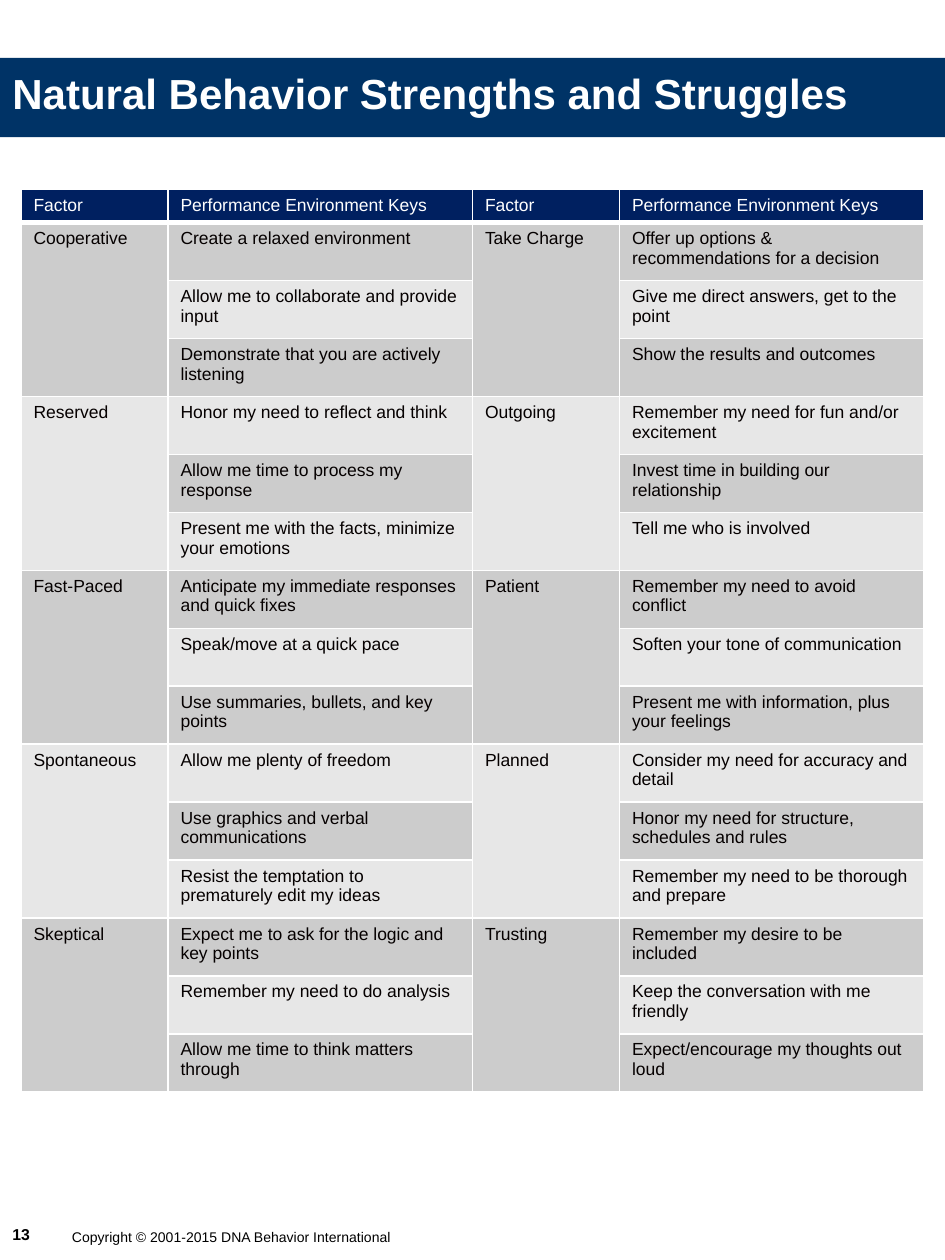
from lxml.etree import SubElement
from pptx import Presentation
from pptx.dml.color import RGBColor
from pptx.enum.shapes import MSO_SHAPE
from pptx.enum.text import MSO_ANCHOR
from pptx.oxml.ns import qn
from pptx.util import Inches, Pt

THEME = {
    "band": RGBColor.from_string("003366"),
    "header": RGBColor.from_string("002060"),
    "stripes": [RGBColor.from_string("CCCCCC"), RGBColor.from_string("E7E7E7")],
    "border": "FFFFFF",
    "title": {"size": Pt(24), "bold": True, "color": "FFFFFF"},
    "heading": {"size": Pt(10), "bold": False, "color": "FFFFFF"},
    "body": {"size": Pt(10), "bold": False, "color": "050000"},
    "number": {"size": Pt(9), "bold": True, "color": "000000"},
    "copyright": {"size": Pt(8), "bold": False, "color": "000000"},
}

HEADINGS = ["Factor", "Performance Environment Keys"] * 2
ROWS_PER_FACTOR = 3
FACTOR_PAIRS = [
    ("Cooperative", ["Create a relaxed environment",
                     "Allow me to collaborate and provide input",
                     "Demonstrate that you are actively listening"],
     "Take Charge", ["Offer up options & recommendations for a decision",
                     "Give me direct answers, get to the point",
                     "Show the results and outcomes"]),
    ("Reserved", ["Honor my need to reflect and think",
                  "Allow me time to process my response",
                  "Present me with the facts, minimize your emotions"],
     "Outgoing", ["Remember my need for fun and/or excitement",
                  "Invest time in building our relationship",
                  "Tell me who is involved"]),
    ("Fast-Paced", ["Anticipate my immediate responses and quick fixes",
                    "Speak/move at a quick pace",
                    "Use summaries, bullets, and key points"],
     "Patient", ["Remember my need to avoid conflict",
                 "Soften your tone of communication",
                 "Present me with information, plus your feelings"]),
    ("Spontaneous", ["Allow me plenty of freedom",
                     "Use graphics and verbal communications",
                     "Resist the temptation to prematurely edit my ideas"],
     "Planned", ["Consider my need for accuracy and detail",
                 "Honor my need for structure, schedules and rules",
                 "Remember my need to be thorough and prepare"]),
    ("Skeptical", ["Expect me to ask for the logic and key points",
                   "Remember my need to do analysis",
                   "Allow me time to think matters through"],
     "Trusting", ["Remember my desire to be included",
                  "Keep the conversation with me friendly",
                  "Expect/encourage my thoughts out loud"]),
]


def write(text_frame, text, style):
    paragraph = text_frame.paragraphs[0]
    paragraph.text = text
    font = paragraph.runs[0].font
    font.name = "Arial"
    font.color.rgb = RGBColor.from_string(THEME[style]["color"])
    for attribute in ("size", "bold"):
        setattr(font, attribute, THEME[style][attribute])


def format_cell(cell, color, bottom_width):
    """Draw the four borders, then the fill, as the cell's schema orders them."""
    properties = cell._tc.get_or_add_tcPr()
    for side, width in {"L": 1, "R": 1, "T": 1, "B": bottom_width}.items():
        line = SubElement(properties, qn(f"a:ln{side}"), w=str(Pt(width)))
        fill = SubElement(line, qn("a:solidFill"))
        SubElement(fill, qn("a:srgbClr"), val=THEME["border"])
    cell.fill.solid()
    cell.fill.fore_color.rgb = color


presentation = Presentation()
presentation.slide_width, presentation.slide_height = Inches(7.5), Inches(10)
width, height = presentation.slide_width, presentation.slide_height
slide = presentation.slides.add_slide(presentation.slide_layouts[6])

band = slide.shapes.add_shape(
    MSO_SHAPE.RECTANGLE, 0, int(height * 0.046), width, int(height * 0.063))
band.shadow.inherit = False
band.fill.solid()
band.fill.fore_color.rgb = THEME["band"]
band.line.fill.background()

# Text boxes: left, top, width and height as shares of the slide
TEXTS = [
    ("13", "number", (0, 0.967, 0.07, 0.025), MSO_ANCHOR.MIDDLE, True),
    ("Copyright © 2001-2015 DNA Behavior International", "copyright",
     (0.063, 0.97, 0.37, 0.024), MSO_ANCHOR.MIDDLE, False),
    ("Natural Behavior Strengths and Struggles", "title",
     (0, 0.049, 1, 0.05), MSO_ANCHOR.TOP, True),
]
for text, style, (left, top, box_width, box_height), anchor, wrap in TEXTS:
    box = slide.shapes.add_textbox(int(width * left), int(height * top),
                                   int(width * box_width), int(height * box_height))
    for attribute, value in {"word_wrap": wrap, "vertical_anchor": anchor}.items():
        setattr(box.text_frame, attribute, value)
    write(box.text_frame, text, style)

# The table sits on a grid of 45 columns, one of them left free at each side
column = width / 45
column_spans = [7, 14.5, 7, 14.5]
row_heights = [int(height * 0.026)]
row_heights += [int(height * 0.046)] * (ROWS_PER_FACTOR * len(FACTOR_PAIRS))
table = slide.shapes.add_table(
    len(row_heights), len(column_spans), int(column), int(height * 0.15),
    int(column * sum(column_spans)), sum(row_heights)).table
table.horz_banding = False
for table_column, span in zip(table.columns, column_spans):
    table_column.width = int(column * span)
for table_row, row_height in zip(table.rows, row_heights):
    table_row.height = row_height

for index, heading in enumerate(HEADINGS):
    cell = table.cell(0, index)
    format_cell(cell, THEME["header"], 3)
    cell.vertical_anchor = MSO_ANCHOR.MIDDLE
    write(cell.text_frame, heading, "heading")

for row in range(1, len(row_heights)):
    for index in range(len(column_spans)):
        format_cell(table.cell(row, index), THEME["stripes"][(row - 1) % 2], 1)

for pair_index, pair in enumerate(FACTOR_PAIRS):
    first_row = 1 + pair_index * ROWS_PER_FACTOR
    for index in (0, 2):
        factor, keys = pair[index:index + 2]
        factor_cell = table.cell(first_row, index)
        factor_cell.merge(table.cell(first_row + ROWS_PER_FACTOR - 1, index))
        write(factor_cell.text_frame, factor, "body")
        for row, key in enumerate(keys, first_row):
            write(table.cell(row, index + 1).text_frame, key, "body")

presentation.save("out.pptx")
